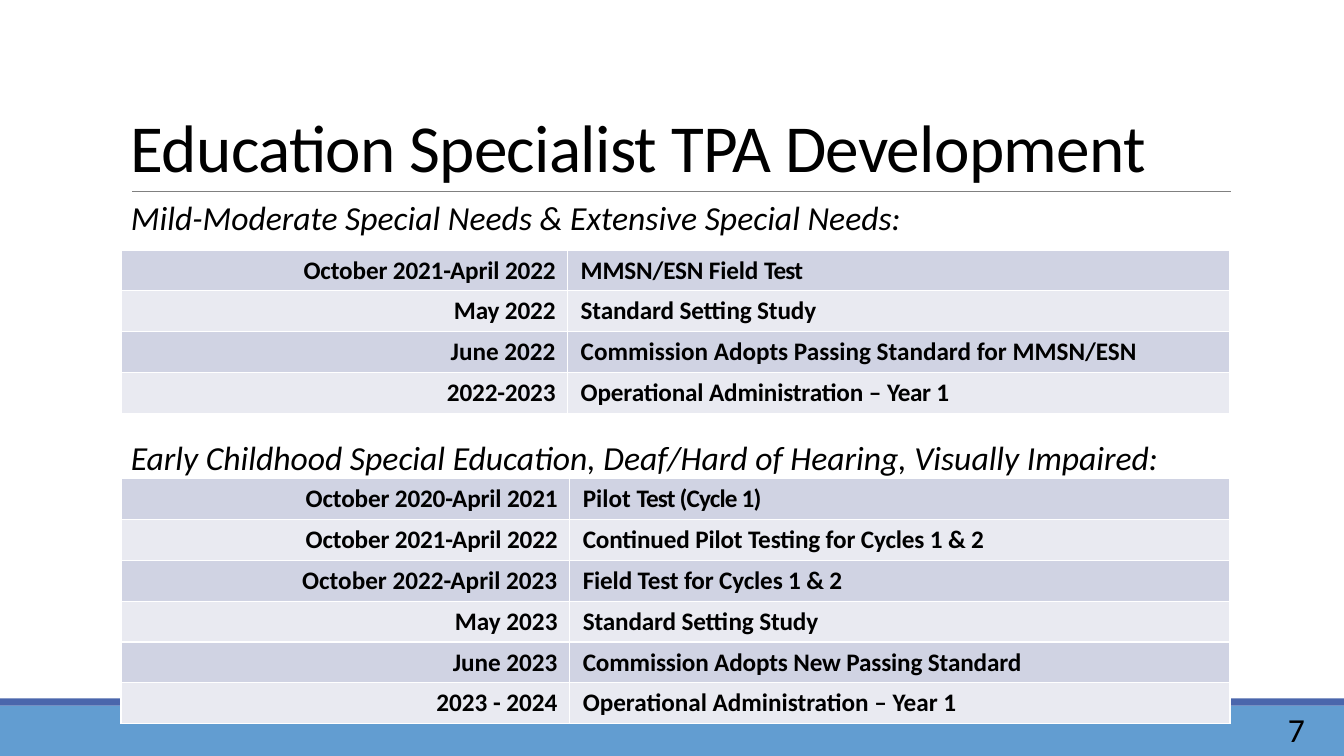
from lxml import etree
from pptx import Presentation
from pptx.dml.color import RGBColor
from pptx.enum.shapes import MSO_CONNECTOR, MSO_SHAPE
from pptx.enum.text import MSO_ANCHOR, PP_ALIGN
from pptx.oxml.ns import qn
from pptx.util import Inches, Pt

STRAIGHT = MSO_CONNECTOR.STRAIGHT
RECTANGLE = MSO_SHAPE.RECTANGLE
TOP, MIDDLE, BOTTOM = MSO_ANCHOR.TOP, MSO_ANCHOR.MIDDLE, MSO_ANCHOR.BOTTOM
LEFT, RIGHT = PP_ALIGN.LEFT, PP_ALIGN.RIGHT

FONT = "Calibri"
BAND_FILLS = ("D0D3E3", "E9EAF1")
ROW_HEIGHT = 0.405
TABLE_LEFT, TABLE_WIDTH = 1.2, 11
CELL_SPACING = -0.1

# A cell is plain text, or a list of (text, letter spacing) spans.
MILD_MODERATE_ROWS = [
    ("October 2021-April 2022", [("MMSN/ESN Field ", -0.1), ("Test", -0.6)]),
    ("May 2022", "Standard Setting Study"),
    ([("June 2022", 0)], [("Commission Adopts Passing Standard for MMSN/ESN", 0)]),
    ("2022-2023", [("Operational Administration ", -0.1), ("– ", 0),
                   ("Year ", -0.3), ("1", 0)]),
]
EARLY_CHILDHOOD_ROWS = [
    ("October 2020-April 2021", [("Pilot ", 0), ("Test (Cycle 1)", -0.6)]),
    ("October 2021-April 2022", "Continued Pilot Testing for Cycles 1 & 2"),
    ([("October 2022-April 2023", 0)], "Field Test for Cycles 1 & 2"),
    ([("May 2023", 0)], "Standard Setting Study"),
    ([("June 2023", 0)], "Commission Adopts New Passing Standard"),
    ([("2023 - 2024", 0)], [("Operational Administration – Year 1", 0)]),
]


def color(hex_code):
    return RGBColor.from_string(hex_code)


def set_values(target, values):
    for name, value in values.items():
        setattr(target, name, value)


def add_span(para, text, size, spacing=0, **styles):
    """Append a run; spacing is the letter spacing in points."""
    span = para.add_run()
    span.text = text
    set_values(span.font, {"name": FONT, "size": Pt(size), **styles})
    span.font.color.rgb = color("000000")
    if spacing:
        span.font._element.set("spc", str(round(spacing * 100)))


def add_bar(page, top, height, fill):
    bar = page.shapes.add_shape(RECTANGLE, 0, Inches(top), Inches(13.33), Inches(height))
    bar.shadow.inherit = False
    bar.fill.solid()
    bar.fill.fore_color.rgb = color(fill)
    bar.line.fill.background()


def add_rule(page, left, right, y):
    rule = page.shapes.add_connector(
        STRAIGHT, Inches(left), Inches(y), Inches(right), Inches(y))
    rule.line.color.rgb = color("808080")
    rule.line.width = Pt(0.5)
    etree.SubElement(rule._element.spPr, qn("a:effectLst"))


def add_text(page, area, lines, size, para_format=None, anchor=TOP, spacing=0, **styles):
    box = page.shapes.add_textbox(*map(Inches, area))
    frame = box.text_frame
    set_values(frame, {"word_wrap": True, "vertical_anchor": anchor})
    for index, line in enumerate(lines):
        para = frame.add_paragraph() if index else frame.paragraphs[0]
        set_values(para, para_format or {})
        add_span(para, line, size, spacing, **styles)
    return box


def add_borders(cell):
    properties = cell._tc.get_or_add_tcPr()
    for index, side in enumerate(("a:lnL", "a:lnR", "a:lnT", "a:lnB")):
        border = etree.Element(qn(side), w=str(Pt(1)))
        fill = etree.SubElement(border, qn("a:solidFill"))
        etree.SubElement(fill, qn("a:srgbClr"), val="FFFFFF")
        properties.insert(index, border)


def fill_cell(cell, content, align, fill):
    set_values(cell, {
        "margin_left": Inches(0.13 if align == LEFT else 0),
        "margin_right": Inches(0.12 if align == RIGHT else 0),
        "margin_top": Inches(0.05),
        "margin_bottom": 0,
    })
    cell.fill.solid()
    cell.fill.fore_color.rgb = color(fill)
    add_borders(cell)
    para = cell.text_frame.paragraphs[0]
    set_values(para, {"alignment": align, "space_before": Pt(3.6)})
    spans = [(content, CELL_SPACING)] if isinstance(content, str) else content
    for text, spacing in spans:
        add_span(para, text, 18, spacing, bold=True)


def add_schedule(page, top, date_width, rows):
    """Add a banded table of dates and milestones."""
    table = page.shapes.add_table(
        len(rows), 2, Inches(TABLE_LEFT), Inches(top),
        Inches(TABLE_WIDTH), Inches(ROW_HEIGHT * len(rows))).table
    set_values(table, {"first_row": False, "horz_banding": False})
    table.columns[0].width = Inches(date_width)
    table.columns[1].width = Inches(TABLE_WIDTH - date_width)
    for index, contents in enumerate(rows):
        table.rows[index].height = Inches(ROW_HEIGHT)
        for column, align in enumerate((RIGHT, LEFT)):
            fill_cell(table.cell(index, column), contents[column], align,
                      BAND_FILLS[index % 2])


def main():
    deck = Presentation()
    set_values(deck, {"slide_width": Inches(13.33), "slide_height": Inches(7.5)})
    page = deck.slides.add_slide(deck.slide_layouts[6])

    add_bar(page, 7, 0.5, "629DD1")
    add_bar(page, 6.93, 0.07, "4A66AC")
    add_rule(page, 1.31, 12.21, 1.9)
    add_text(page, (1.2, 0.31, 11, 1.59), ["Education Specialist TPA Development"], 48,
             {"line_spacing": 0.85}, BOTTOM, -0.5)
    add_schedule(page, 2.48, 4.43, MILD_MODERATE_ROWS)
    headings = add_text(page, (1.2, 1.9, 11.59, 3.33), [
        "Mild-Moderate Special Needs & Extensive Special Needs:",
        "Early Childhood Special Education, Deaf/Hard of Hearing, Visually Impaired:",
    ], 24, italic=True)
    headings.text_frame.paragraphs[1].space_before = Pt(143)
    add_schedule(page, 4.75, 4.45, EARLY_CHILDHOOD_ROWS)
    add_text(page, (11.61, 7.03, 1.43, 0.4), ["7"], 24, {"alignment": RIGHT}, MIDDLE)

    deck.save("out.pptx")


if __name__ == "__main__":
    main()
